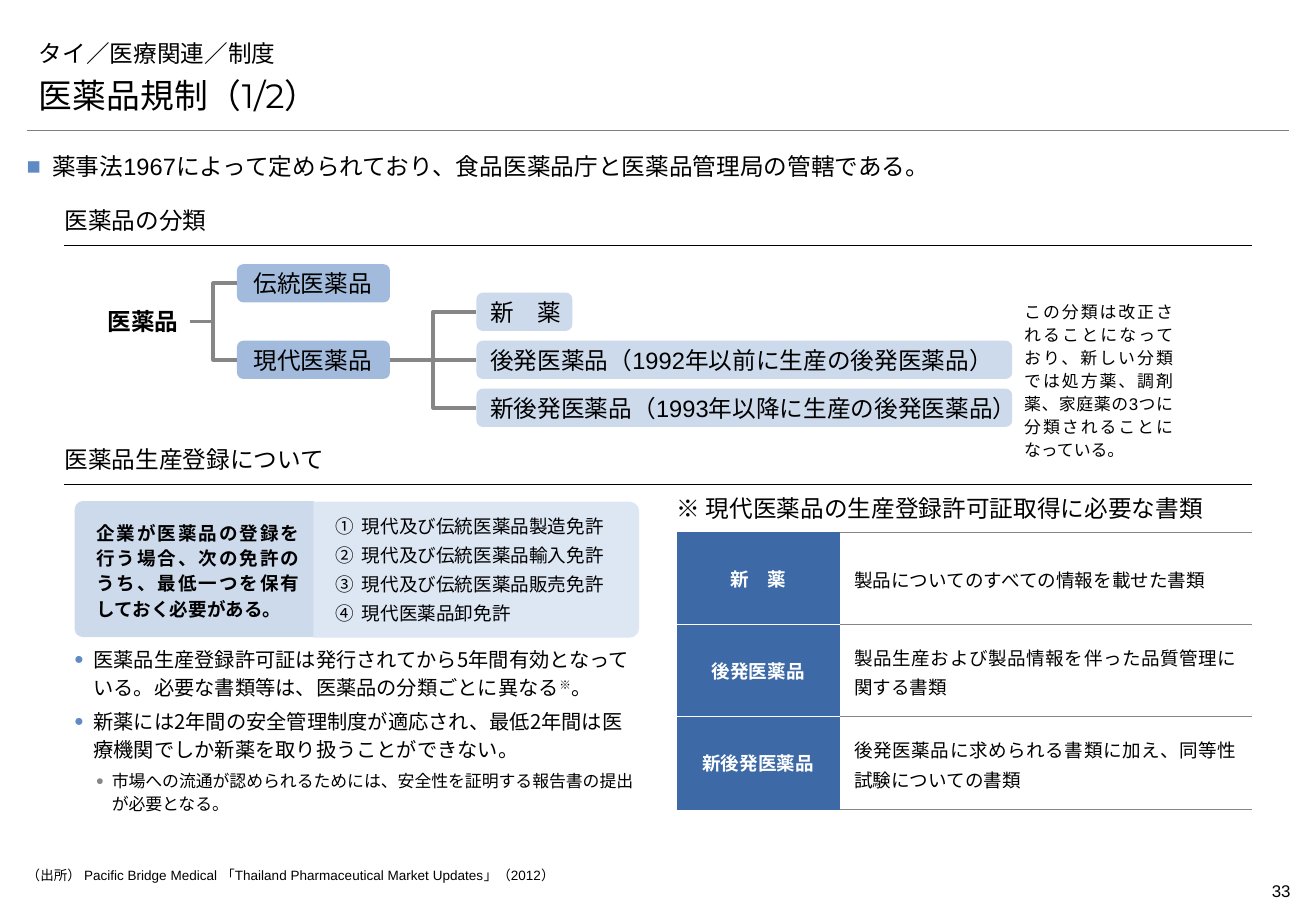
from pptx import Presentation
from pptx.dml.color import RGBColor
from pptx.enum.shapes import MSO_CONNECTOR, MSO_SHAPE
from pptx.enum.text import MSO_ANCHOR, MSO_AUTO_SIZE, PP_ALIGN
from pptx.oxml.ns import qn
from pptx.util import Inches, Pt
from lxml.etree import SubElement

SLIDE_WIDTH, SLIDE_HEIGHT = Inches(10.83), Inches(7.5)
CELL = SLIDE_HEIGHT / 75
COLORS = {
    "black": "000000", "white": "FFFFFF", "rule": "7F7F7F", "branch": "868686",
    "accent": "5F8AC3", "category": "A2BBDC", "kind": "CCDAEC",
    "license": "DDE6F3", "header": "3D6AA7",
}
CJK = "Noto Sans CJK JP"
HEADING = "Montserrat"
LEFT, RIGHT, JUSTIFY, CENTER = PP_ALIGN.LEFT, PP_ALIGN.RIGHT, PP_ALIGN.JUSTIFY, PP_ALIGN.CENTER
TOP, MIDDLE, BOTTOM = MSO_ANCHOR.TOP, MSO_ANCHOR.MIDDLE, MSO_ANCHOR.BOTTOM
PLAIN = (1, 0.5, 1, 0.5)
FLAT = (0, 0, 0, 0)
HEADING_INSETS = (0, 0.5, 0, 0.8)


def grid(*cells):
    return [round(cell * CELL) for cell in cells]


def rgb(color):
    return RGBColor.from_string(COLORS[color])


def add_bullet(paragraph, bullet, color, percent):
    properties = paragraph._p.get_or_add_pPr()
    if not bullet:
        SubElement(properties, qn("a:buNone"))
    elif bullet == "circleNumDbPlain":
        SubElement(properties, qn("a:buAutoNum"), type=bullet)
    else:
        SubElement(SubElement(properties, qn("a:buClr")), qn("a:srgbClr"), val=COLORS[color])
        SubElement(properties, qn("a:buSzPct"), val=str(percent * 1000))
        SubElement(properties, qn("a:buFont"), typeface="Arial")
        SubElement(properties, qn("a:buChar"), char=bullet)


def write(paragraph, text, size, font="Arial", color="black", bold=False, align=LEFT,
          spacing=1, after=0, bullet=None, bullet_color="accent", percent=100,
          indent=(0, 0), level=0):
    paragraph.level = level
    paragraph.alignment = align
    paragraph.line_spacing = spacing
    paragraph.space_before, paragraph.space_after = Pt(0), Pt(after)
    margin, hanging = grid(*indent)
    properties = paragraph._p.get_or_add_pPr()
    properties.set("marL", str(margin))
    properties.set("indent", str(-hanging))
    add_bullet(paragraph, bullet, bullet_color, percent)
    for part, baseline in [(text, 0)] if isinstance(text, str) else text:
        run = paragraph.add_run()
        run.text = part
        run.font.size, run.font.bold = Pt(size), bold
        run.font.color.rgb = rgb(color)
        run.font.name = font
        style = run._r.get_or_add_rPr()
        style.set("lang", "ja-JP")
        style.set("baseline", str(baseline * 1000))
        SubElement(style, qn("a:ea"), typeface=CJK)


def fill_frame(frame, items, insets=PLAIN, anchor=TOP, wrap=True, **style):
    frame.auto_size = MSO_AUTO_SIZE.NONE
    frame.word_wrap = wrap
    frame.vertical_anchor = anchor
    (frame.margin_left, frame.margin_top,
     frame.margin_right, frame.margin_bottom) = grid(*insets)
    for number, item in enumerate(items):
        paragraph = frame.add_paragraph() if number else frame.paragraphs[0]
        text, own = item if isinstance(item, tuple) else (item, {})
        write(paragraph, text, **{**style, **own})


def add_text(slide, area, text, **style):
    fill_frame(slide.shapes.add_textbox(*grid(*area)).text_frame, [text], **style)


def fill_placeholder(placeholder, area, items, **style):
    placeholder.left, placeholder.top, placeholder.width, placeholder.height = grid(*area)
    fill_frame(placeholder.text_frame, items, **style)


def add_panel(slide, preset, area, fill, items, **style):
    panel = slide.shapes.add_shape(preset, *grid(*area))
    panel.shadow.inherit = False
    panel.line.fill.background()
    if fill:
        panel.fill.solid()
        panel.fill.fore_color.rgb = rgb(fill)
    else:
        panel.fill.background()
    fill_frame(panel.text_frame, items, anchor=MIDDLE, **style)
    return panel


def add_node(slide, area, text, fill=None, left_inset=1, bold=False):
    return add_panel(slide, MSO_SHAPE.ROUNDED_RECTANGLE, (*area, 3.15), fill, [text],
                     insets=(left_inset, 0.4, 1, 0.4), wrap=False, size=14, bold=bold)


def add_side_panel(slide, area, fill, items, rotation, direction, corner, **style):
    panel = add_panel(slide, MSO_SHAPE.ROUND_2_SAME_RECTANGLE, area, fill, items, **style)
    panel.rotation = rotation
    panel.adjustments[0], panel.adjustments[1] = corner, 0
    panel.text_frame._txBody.bodyPr.set("vert", direction)


def add_line(slide, kind, ends, color, width):
    line = slide.shapes.add_connector(kind, *grid(*ends))
    line.line.color.rgb, line.line.width = rgb(color), Pt(width)
    SubElement(line._element.spPr, qn("a:effectLst"))
    return line


def add_branch(slide, parent, child):
    level = parent.top == child.top
    kind = MSO_CONNECTOR.STRAIGHT if level else MSO_CONNECTOR.ELBOW
    branch = add_line(slide, kind, FLAT, "branch", 2.25)
    branch.begin_connect(parent, 3)
    branch.end_connect(child, 1)


def add_section(slide, title, row):
    add_line(slide, MSO_CONNECTOR.STRAIGHT, (5.3, row, 103, row), "black", 0.75)
    add_text(slide, (5.3, row - 3.2, 97.6, 3.1), title,
             size=14, font=HEADING, anchor=BOTTOM, insets=HEADING_INSETS)


def add_tree(slide):
    root = add_node(slide, (7.7, 24.9, 7.9), "医薬品", bold=True)
    traditional = add_node(slide, (19.5, 21.75, 12.6), "伝統医薬品", "category", 1.2)
    modern = add_node(slide, (19.5, 28.05, 12.6), "現代医薬品", "category", 1.2)
    kinds = [("新　薬", 7.9), ("後発医薬品（1992年以前に生産の後発医薬品）", 44.1),
             ("新後発医薬品（1993年以降に生産の後発医薬品）", 44.1)]
    for category in (traditional, modern):
        add_branch(slide, root, category)
    for number, (kind, width) in enumerate(kinds):
        node = add_node(slide, (39.2, 24.1 + 3.95 * number, width), kind, "kind")
        add_branch(slide, modern, node)


def format_cell(cell, text, fill, borders, insets=PLAIN, **style):
    if fill:
        cell.fill.solid()
        cell.fill.fore_color.rgb = rgb(fill)
    else:
        cell.fill.background()
    cell.vertical_anchor = MIDDLE
    cell.margin_left, cell.margin_top, cell.margin_right, cell.margin_bottom = grid(*insets)
    write(cell.text_frame.paragraphs[0], text, size=11, **style)
    properties = cell._tc.get_or_add_tcPr()
    for position, (side, color) in enumerate(zip("LRTB", (None, None, *borders))):
        border = SubElement(properties, qn(f"a:ln{side}"), w=str(Pt(0.5)))
        if color:
            paint = SubElement(border, qn("a:solidFill"))
            SubElement(paint, qn("a:srgbClr"), val=COLORS[color])
        else:
            SubElement(border, qn("a:noFill"))
        properties.insert(position, border)


def add_documents(slide):
    documents = [("新　薬", "製品についてのすべての情報を載せた書類"),
                 ("後発医薬品", "製品生産および製品情報を伴った品質管理に関する書類"),
                 ("新後発医薬品", "後発医薬品に求められる書類に加え、同等性試験についての書類")]
    table = slide.shapes.add_table(3, 2, *grid(55.7, 43.8, 47.3, 22.8)).table
    table.first_row = table.horz_banding = False
    table.columns[0].width, table.columns[1].width = grid(13.4, 33.9)
    edges = ["header", "white", "white", "header"]
    for row, (kind, document) in enumerate(documents):
        format_cell(table.cell(row, 0), kind, "header", edges[row:row + 2],
                    font=HEADING, color="white", bold=True, align=CENTER)
        format_cell(table.cell(row, 1), document, None, ("branch", "branch"),
                    insets=(1.2, 0.5, 1.2, 0.5), align=JUSTIFY, spacing=1.1, after=2)


def add_licenses(slide):
    add_side_panel(slide, (10.4, 37, 11.2, 19.7), "kind",
                   ["企業が医薬品の登録を行う場合、次の免許のうち、最低一つを保有しておく必要がある。"],
                   270, "vert", 0.06, insets=(0.8, 1.6, 0.8, 1.2),
                   size=11, font=CJK, bold=True, align=JUSTIFY, spacing=1.14)
    licenses = [f"現代及び伝統医薬品{action}免許" for action in ("製造", "輸入", "販売")]
    add_side_panel(slide, (33.6, 33.5, 11.2, 26.8), "license", [*licenses, "現代医薬品卸免許"],
                   90, "vert270", 0.07, size=11, after=4, level=1,
                   bullet="circleNumDbPlain", indent=(3, 2.2))


def add_headings(slide):
    title, heading, notes, lead, spare = slide.placeholders
    fill_placeholder(title, (2.2, 2.6, 103.9, 3.4), ["タイ／医療関連／制度"],
                     size=14, font=HEADING, anchor=BOTTOM)
    fill_placeholder(heading, (2.2, 5.6, 104, 4.4), ["医薬品規制（1/2）"],
                     size=20, font=HEADING, anchor=BOTTOM)
    fill_placeholder(lead, (2.2, 12.3, 103.9, 2.6),
                     ["薬事法1967によって定められており、食品医薬品庁と医薬品管理局の管轄である。"],
                     insets=FLAT, size=14, align=JUSTIFY, spacing=1.1, after=2,
                     bullet="■", indent=(2.1, 2.1))
    validity = [("医薬品生産登録許可証は発行されてから5年間有効となっている。必要な書類等は、医薬品の分類ごとに異なる", 0),
                ("※", 30), ("。", 0)]
    safety = "新薬には2年間の安全管理制度が適応され、最低2年間は医療機関でしか新薬を取り扱うことができない。"
    report = ("市場への流通が認められるためには、安全性を証明する報告書の提出が必要となる。",
              {"size": 10, "level": 1, "indent": (3.1, 1.3), "bullet_color": "branch"})
    fill_placeholder(notes, (6.1, 52.5, 46.5, 15.2), [validity, safety, report],
                     insets=(0, 0.5, 0, 0.5), size=12, font=CJK, spacing=1.14, after=4,
                     bullet="●", percent=80, indent=(1.6, 1.6))
    spare._element.getparent().remove(spare._element)


def main():
    presentation = Presentation()
    presentation.slide_width, presentation.slide_height = SLIDE_WIDTH, SLIDE_HEIGHT
    slide = presentation.slides.add_slide(presentation.slide_layouts.get_by_name("Comparison"))
    add_headings(slide)
    add_line(slide, MSO_CONNECTOR.STRAIGHT, (2.2, 10.7, 106.1, 10.7), "rule", 0.25)
    add_section(slide, "医薬品の分類", 20.2)
    add_tree(slide)
    add_text(slide, (83.3, 24.1, 14.2, 12.5),
             "この分類は改正されることになっており、新しい分類では処方薬、調剤薬、家庭薬の3つに分類されることになっている。",
             size=10, align=JUSTIFY, spacing=1.14)
    add_section(slide, "医薬品生産登録について", 39.9)
    add_licenses(slide)
    add_text(slide, (55.7, 39.9, 47.2, 3.9), "※ 現代医薬品の生産登録許可証取得に必要な書類",
             size=14, font=HEADING, anchor=BOTTOM, insets=HEADING_INSETS)
    add_documents(slide)
    add_text(slide, (2.2, 71.4, 94.5, 1.6),
             "（出所） Pacific Bridge Medical 「Thailand Pharmaceutical Market Updates」（2012）",
             size=8, insets=FLAT)
    add_text(slide, (98.3, 72, 7.9, 2.7), "33", size=10, align=RIGHT, insets=(0, 0.5, 0, 0.5))
    presentation.save("out.pptx")


if __name__ == "__main__":
    main()
